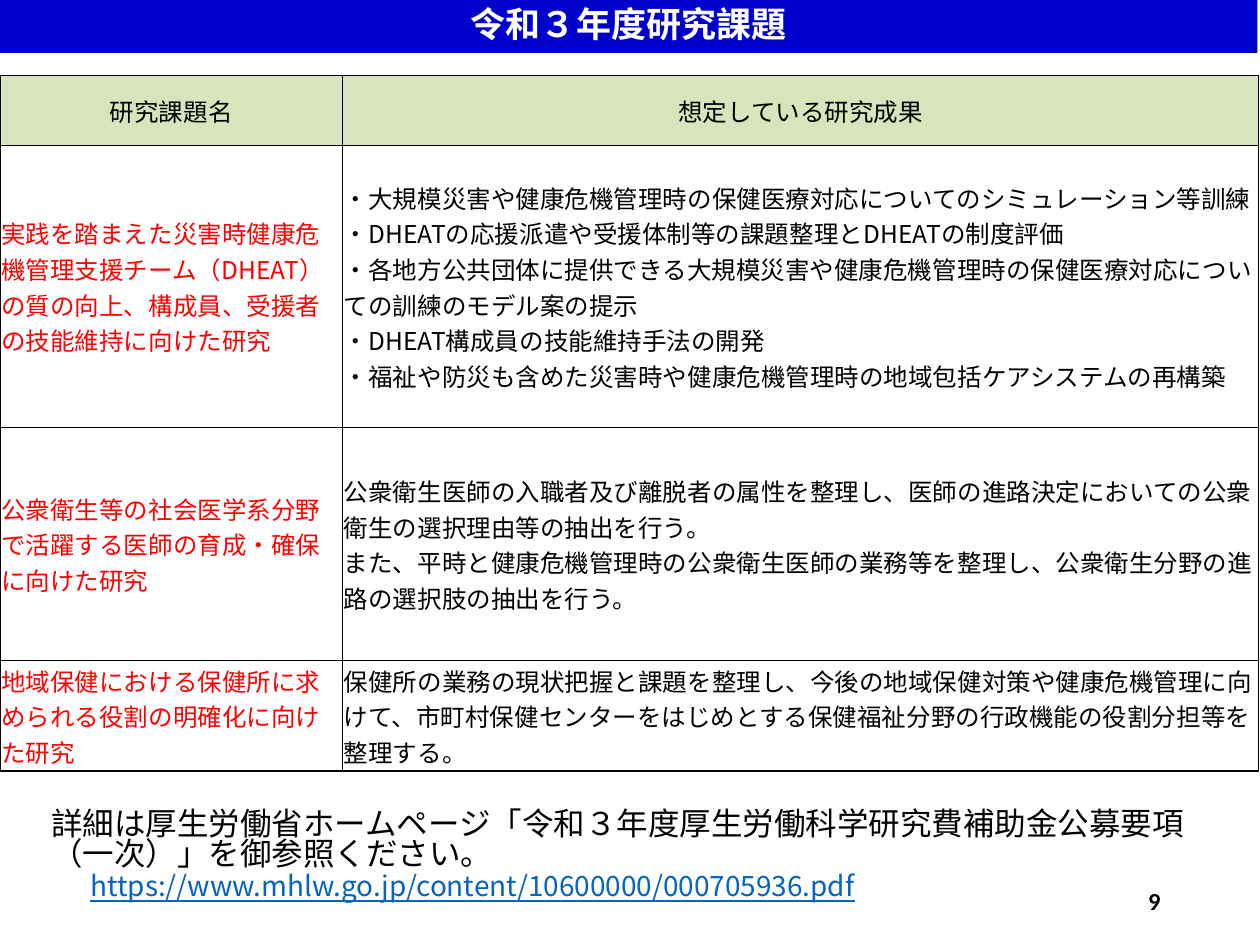
from lxml import etree
from pptx import Presentation
from pptx.dml.color import RGBColor
from pptx.enum import shapes, text
from pptx.oxml.ns import qn
from pptx.util import Inches, Pt

JP = "Noto Sans CJK JP"
LEFT, CENTER, RIGHT = text.PP_ALIGN.LEFT, text.PP_ALIGN.CENTER, text.PP_ALIGN.RIGHT
MIDDLE = text.MSO_ANCHOR.MIDDLE


def add_text(p, words, size, color="000000", font=JP, bold=False, underline=False):
    """Add one run, with the font set for Latin and East Asian letters."""
    r = p.add_run()
    r.text = words
    f = r.font
    f.size, f.bold, f.underline, f.name = Pt(size), bold, underline, font
    f.color.rgb = RGBColor.from_string(color)
    latin = r._r.rPr.find(qn("a:latin"))
    ea = etree.Element(qn("a:ea"), typeface=font)
    latin.addnext(ea)


def set_border(cell, side, width):
    ln = etree.SubElement(cell._tc.get_or_add_tcPr(), qn("a:ln" + side), w=str(Pt(width)))
    fill = etree.SubElement(ln, qn("a:solidFill"))
    etree.SubElement(fill, qn("a:srgbClr"), val="000000")


prs = Presentation()
prs.slide_width, prs.slide_height = Inches(10), Inches(7.5)
s = prs.slides.add_slide(prs.slide_layouts[6])

# Title bar
sp = s.shapes.add_shape(shapes.MSO_SHAPE.RECTANGLE, 0, 0, Inches(9.98), Inches(0.42))
sp.shadow.inherit = False
sp.fill.solid()
sp.fill.fore_color.rgb = RGBColor.from_string("0000CC")
sp.line.fill.background()
tf = sp.text_frame
tf.vertical_anchor = MIDDLE
p = tf.paragraphs[0]
p.alignment, p.line_spacing = CENTER, 0.9
add_text(p, "令和３年度研究課題", 20, "FFFFFF", bold=True)

# Research topics: each cell is a list of lines
rows = [
    (["研究課題名"], ["想定している研究成果"]),
    (["実践を踏まえた災害時健康危機管理支援チーム（DHEAT）の質の向上、構成員、受援者の技能維持に向けた研究"],
     ["・大規模災害や健康危機管理時の保健医療対応についてのシミュレーション等訓練",
      "・DHEATの応援派遣や受援体制等の課題整理とDHEATの制度評価",
      "・各地方公共団体に提供できる大規模災害や健康危機管理時の保健医療対応についての訓練のモデル案の提示",
      "・DHEAT構成員の技能維持手法の開発",
      "・福祉や防災も含めた災害時や健康危機管理時の地域包括ケアシステムの再構築"]),
    (["公衆衛生等の社会医学系分野で活躍する医師の育成・確保に向けた研究"],
     ["公衆衛生医師の入職者及び離脱者の属性を整理し、医師の進路決定においての公衆衛生の選択理由等の抽出を行う。",
      "また、平時と健康危機管理時の公衆衛生医師の業務等を整理し、公衆衛生分野の進路の選択肢の抽出を行う。"]),
    (["地域保健における保健所に求められる役割の明確化に向けた研究"],
     ["保健所の業務の現状把握と課題を整理し、今後の地域保健対策や健康危機管理に向けて、"
      "市町村保健センターをはじめとする保健福祉分野の行政機能の役割分担等を整理する。"]),
]
widths, heights = [2.72, 7.27], [0.55, 2.24, 1.85, 0.88]
table = s.shapes.add_table(4, 2, 0, Inches(0.6), Inches(9.98), Inches(5.52)).table
for col, width in zip(table.columns, widths):
    col.width = Inches(width)
for i, (row, height) in enumerate(zip(rows, heights)):
    table.rows[i].height = Inches(height)
    for j, lines in enumerate(row):
        cell = table.cell(i, j)
        cell.margin_left = cell.margin_right = cell.margin_top = Inches(0.01)
        cell.margin_bottom = 0
        cell.vertical_anchor = MIDDLE
        # Outer edges are thicker than inner ones
        for side, outer in (("L", j == 0), ("R", j == 1), ("T", i == 0), ("B", i == 3)):
            set_border(cell, side, 1 if outer else 0.5)
        cell.fill.solid()
        cell.fill.fore_color.rgb = RGBColor.from_string("D8E4BC" if i == 0 else "FFFFFF")
        p = cell.text_frame.paragraphs[0]
        p.alignment = CENTER if i == 0 else LEFT
        for n, line in enumerate(lines):
            if n:
                p.add_line_break()
            add_text(p, line, 14, "FF0000" if i and j == 0 else "000000")

# Note with the address
tf = s.shapes.add_textbox(Inches(0.31), Inches(6.39), Inches(9.65), Inches(1.1)).text_frame
tf.word_wrap = True
p = tf.paragraphs[0]
p.line_spacing = 0.8
add_text(p, "詳細は厚生労働省ホームページ「令和３年度厚生労働科学研究費補助金公募要項（一次）」を御参照ください。", 18)
p = tf.add_paragraph()
p.line_spacing, p.space_before = 0.8, Pt(2)
p._p.get_or_add_pPr().set("marL", str(Inches(0.31)))
add_text(p, "https://www.mhlw.go.jp/content/10600000/000705936.pdf", 16, "0563C1", underline=True)

# Page number
tf = s.shapes.add_textbox(Inches(7.06), Inches(6.95), Inches(2.25), Inches(0.4)).text_frame
tf.word_wrap = True
tf.vertical_anchor = MIDDLE
p = tf.paragraphs[0]
p.alignment = RIGHT
add_text(p, "9", 14, font="Calibri", bold=True)

prs.save("out.pptx")
